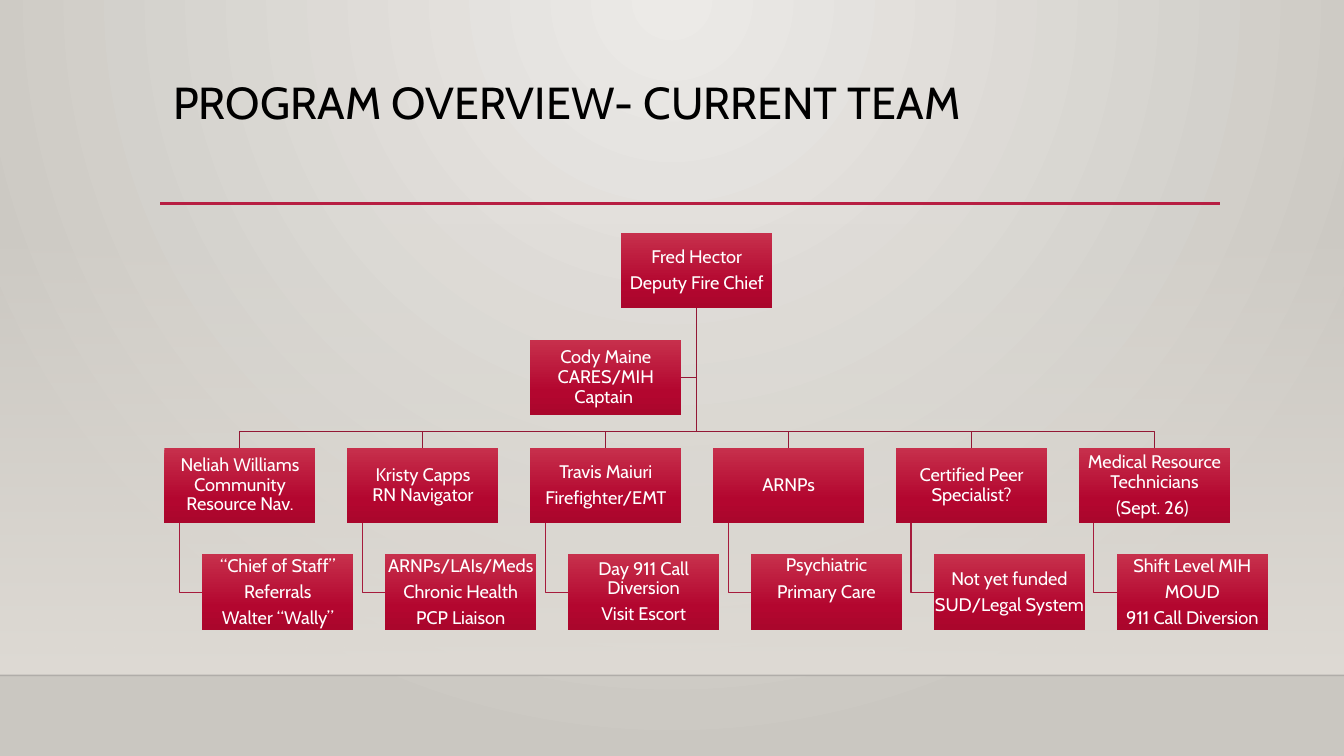
"""Build the current team organisation chart slide."""
from pptx import Presentation
from pptx.dml.color import RGBColor
from pptx.enum.shapes import MSO_CONNECTOR, MSO_SHAPE
from pptx.enum.text import MSO_ANCHOR, PP_ALIGN
from pptx.oxml import parse_xml
from pptx.oxml.ns import nsdecls, qn
from pptx.util import Inches, Pt

STRAIGHT = MSO_CONNECTOR.STRAIGHT
RECTANGLE = MSO_SHAPE.RECTANGLE
MIDDLE = MSO_ANCHOR.MIDDLE
CENTER = PP_ALIGN.CENTER

TITLE = "PROGRAM OVERVIEW- CURRENT TEAM"
CHIEF = ["Fred Hector", "Deputy Fire Chief"]
CAPTAIN = ["Cody Maine\vCARES/MIH Captain "]
TEAM = [
    (["Neliah Williams\vCommunity Resource Nav."],
     ["“Chief of Staff”", "Referrals", "Walter “Wally”"]),
    (["Kristy Capps\vRN Navigator"],
     ["ARNPs/LAIs/Meds", "Chronic Health", "PCP Liaison"]),
    (["Travis Maiuri", "Firefighter/EMT"],
     ["Day 911 Call Diversion", "Visit Escort"]),
    (["ARNPs"], ["Psychiatric", "Primary Care"]),
    (["Certified Peer Specialist?"], ["Not yet funded", "SUD/Legal System"]),
    (["Medical Resource Technicians", "(Sept. 26) "],
     ["Shift Level MIH", "MOUD", "911 Call Diversion"]),
]
RAISED_DUTIES = 3

FONT = "Cabin"
BACKDROP = [(0, "ECEAE7", 100), (100, "CAC7C1", 100)]
WALL = [(0, "DFDBD5", 0), (100, "DFDBD5", 100)]
CRIMSON = [(0, "C7304C", 100), (69, "B3062F", 100), (100, "AA062C", 100)]
DOWNWARD = '<a:lin {} ang="5400000" scaled="0"/>'
FROM_TOP = ('<a:path {} path="circle"><a:fillToRect l="43000" t="0" '
            'r="43000" b="100000"/></a:path>')

WIDTH, HEIGHT = 13.33, 7.5
FLOOR_Y = 6.7
BOX_W, BOX_H = 1.5, 0.75
CHIEF_X, CHIEF_Y = 6.16, 2.31
CAPTAIN_Y = 3.37
MEMBER_Y, DUTY_Y = 4.44, 5.5
FIRST_X, LAST_X = 1.63, 10.7
PITCH = (LAST_X - FIRST_X) / (len(TEAM) - 1)
RAIL_Y = 4.28
DUTY_INDENT, STEM_INDENT = 0.375, 0.15


def color(code):
    return RGBColor.from_string(code)


def fill_gradient(fill, element, stops, direction):
    fill.gradient()
    gradient = element.find(".//" + qn("a:gradFill"))
    for child in list(gradient):
        gradient.remove(child)
    marks = "".join(
        f'<a:gs pos="{place * 1000}"><a:srgbClr val="{code}">'
        f'<a:alpha val="{opacity * 1000}"/></a:srgbClr></a:gs>'
        for place, code, opacity in stops)
    gradient.append(parse_xml(f'<a:gsLst {nsdecls("a")}>{marks}</a:gsLst>'))
    gradient.append(parse_xml(direction.format(nsdecls("a"))))


def add_panel(page, x, y, width, height, stops):
    panel = page.shapes.add_shape(
        RECTANGLE, Inches(x), Inches(y), Inches(width), Inches(height))
    panel.shadow.inherit = False
    panel.line.fill.background()
    fill_gradient(panel.fill, panel.element, stops, DOWNWARD)
    return panel


def add_rule(page, x1, x2, y, code, weight):
    rule = page.shapes.add_connector(
        STRAIGHT, Inches(x1), Inches(y), Inches(x2), Inches(y))
    rule.line.color.rgb = color(code)
    rule.line.width = Pt(weight)
    rule.element.spPr.append(parse_xml(f'<a:effectLst {nsdecls("a")}/>'))
    return rule


def add_branch(page, points, code):
    corners = [(Inches(x), Inches(y)) for x, y in points]
    builder = page.shapes.build_freeform(*corners[0])
    builder.add_line_segments(corners[1:], close=False)
    branch = builder.convert_to_shape()
    branch.shadow.inherit = False
    branch.fill.background()
    branch.line.color.rgb = color(code)
    branch.line.width = Pt(0.75)


def style(para, size, code):
    para.line_spacing = 0.9
    para.font.name = FONT
    para.font.size = Pt(size)
    para.font.color.rgb = color(code)


def add_box(page, x, y, lines, bottom=0.01):
    box = add_panel(page, x, y, BOX_W, BOX_H, CRIMSON)
    frame = box.text_frame
    frame.word_wrap = True
    frame.vertical_anchor = MIDDLE
    frame.margin_left = frame.margin_right = frame.margin_top = Inches(0.01)
    frame.margin_bottom = Inches(bottom)
    frame.text = "\n".join(lines)
    for para in frame.paragraphs:
        para.alignment = CENTER
        para.space_after = Pt(4.55)
        style(para, 13, "FFFFFF")


def add_title(page):
    box = page.shapes.add_textbox(
        Inches(1.62), Inches(0.75), Inches(10.96), Inches(0.77))
    box.text_frame.word_wrap = True
    box.text_frame.text = TITLE
    style(box.text_frame.paragraphs[0], 32, "000000")


def add_scenery(page):
    fill_gradient(page.background.fill, page.element, BACKDROP, FROM_TOP)
    add_panel(page, 0, 2.21, WIDTH, FLOOR_Y - 2.21, WALL)
    edge = add_rule(page, 0, WIDTH, FLOOR_Y, "000001", 1)
    edge.element.find(".//" + qn("a:srgbClr")).append(
        parse_xml(f'<a:alpha {nsdecls("a")} val="20000"/>'))
    add_rule(page, 1.59, 12.1, 2.02, "B71E42", 2.5)


def add_chart_of_team(page):
    columns = [FIRST_X + PITCH * i for i in range(len(TEAM))]
    captain_x = columns[2]
    trunk_x = CHIEF_X + BOX_W / 2
    chief_bottom = CHIEF_Y + BOX_H
    captain_mid = CAPTAIN_Y + BOX_H / 2
    add_branch(page, [(trunk_x, chief_bottom), (trunk_x, captain_mid),
                      (captain_x + BOX_W, captain_mid)], "931835")
    for x in columns:
        stem, middle = x + STEM_INDENT, x + BOX_W / 2
        duty_mid = DUTY_Y + BOX_H / 2
        add_branch(page, [(stem, MEMBER_Y + BOX_H), (stem, duty_mid),
                          (x + DUTY_INDENT, duty_mid)], "A61B3C")
        add_branch(page, [(trunk_x, chief_bottom), (trunk_x, RAIL_Y),
                          (middle, RAIL_Y), (middle, MEMBER_Y)], "931835")
    add_box(page, CHIEF_X, CHIEF_Y, CHIEF)
    for i, (x, (member, duties)) in enumerate(zip(columns, TEAM)):
        add_box(page, x, MEMBER_Y, member)
        add_box(page, x + DUTY_INDENT, DUTY_Y, duties,
                0.27 if i == RAISED_DUTIES else 0.01)
    add_box(page, captain_x, CAPTAIN_Y, CAPTAIN)


def main():
    deck = Presentation()
    deck.slide_width, deck.slide_height = Inches(WIDTH), Inches(HEIGHT)
    page = deck.slides.add_slide(deck.slide_layouts[6])
    add_scenery(page)
    add_title(page)
    add_chart_of_team(page)
    deck.save("out.pptx")


if __name__ == "__main__":
    main()
